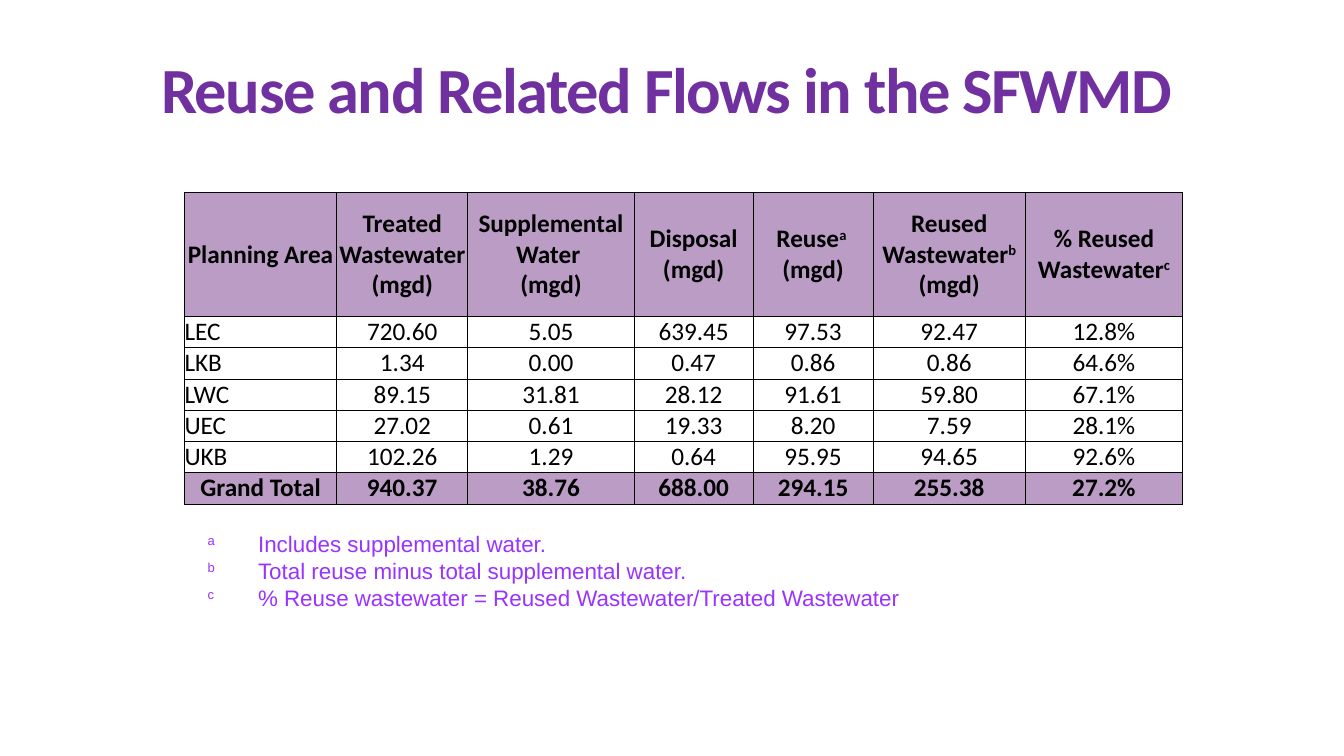
from lxml import etree
from pptx import Presentation
from pptx import util as u
from pptx.dml import color
from pptx.enum import text
from pptx.oxml import ns

LILAC = "BA9CC5"
COLUMN_WIDTHS = [1.51, 1.3, 1.65, 1.18, 1.19, 1.51, 1.56]
HEADER_HEIGHT, ROW_HEIGHT = 1.23, 0.31
ROWS = [
    ["Planning Area", "Treated Wastewater (mgd)", "Supplemental Water \n(mgd)",
     "Disposal (mgd)", "Reuse^a ^\n(mgd)", "Reused Wastewater^b^ (mgd)",
     "% Reused Wastewater^c"],
    ["LEC", "720.60", "5.05", "639.45", "97.53", "92.47", "12.8%"],
    ["LKB", "1.34", "0.00", "0.47", "0.86", "0.86", "64.6%"],
    ["LWC", "89.15", "31.81", "28.12", "91.61", "59.80", "67.1%"],
    ["UEC", "27.02", "0.61", "19.33", "8.20", "7.59", "28.1%"],
    ["UKB", "102.26", "1.29", "0.64", "95.95", "94.65", "92.6%"],
    ["Grand Total", "940.37", "38.76", "688.00", "294.15", "255.38", "27.2%"],
]
FOOTNOTES = [
    "^a^\tIncludes supplemental water.",
    "^b^\tTotal reuse minus total supplemental water.",
    "^c^\t% Reuse wastewater = Reused Wastewater/Treated Wastewater",
]


def rgb(value):
    return color.RGBColor.from_string(value)


def add_runs(paragraph, marked, name, size, hue, bold=False):
    for index, piece in enumerate(marked.split("^")):
        for number, line in enumerate(piece.split("\n")):
            if number:
                paragraph.add_line_break()
            if not line:
                continue
            run = paragraph.add_run()
            run.text = line
            run.font.name = name
            run.font.size = u.Pt(size)
            run.font.bold = bold
            run.font.color.rgb = rgb(hue)
            if index % 2:
                run.font._element.set("baseline", "30000")


presentation = Presentation()
presentation.slide_width = u.Inches(13.33)
presentation.slide_height = u.Inches(7.5)
slide = presentation.slides.add_slide(presentation.slide_layouts[1])

title = slide.shapes.title
title.left, title.top = u.Inches(0.78), u.Inches(0.3)
title.width, title.height = u.Inches(11.66), u.Inches(1.14)
title.text_frame.vertical_anchor = text.MSO_ANCHOR.MIDDLE
heading = title.text_frame.paragraphs[0]
heading.alignment = text.PP_ALIGN.CENTER
add_runs(heading, "Reuse and Related Flows in the SFWMD", "Calibri", 46, "7030A0", True)
heading.runs[0].font._element.set("spc", "-100")

footnotes = slide.placeholders[1]
footnotes.left, footnotes.top = u.Inches(1.46), u.Inches(5.21)
footnotes.width, footnotes.height = u.Inches(11.66), u.Inches(1.2)
footnotes.text_frame.auto_size = text.MSO_AUTO_SIZE.NONE
for index, note in enumerate(FOOTNOTES):
    frame = footnotes.text_frame
    paragraph = frame.add_paragraph() if index else frame.paragraphs[0]
    paragraph.alignment = text.PP_ALIGN.JUSTIFY
    paragraph.space_before = u.Pt(0)
    properties = paragraph._p.get_or_add_pPr()
    properties.set("marL", str(u.Inches(0.5)))
    properties.set("indent", "0")
    etree.SubElement(properties, ns.qn("a:buNone"))
    add_runs(paragraph, note, "Arial", 16, "9933FF")

table = slide.shapes.add_table(
    len(ROWS), len(COLUMN_WIDTHS), u.Inches(1.83), u.Inches(1.91),
    u.Inches(sum(COLUMN_WIDTHS)),
    u.Inches(HEADER_HEIGHT + ROW_HEIGHT * (len(ROWS) - 1))).table
table.first_row = table.horz_banding = False
for column, width in zip(table.columns, COLUMN_WIDTHS):
    column.width = u.Inches(width)

for row_index, values in enumerate(ROWS):
    table.rows[row_index].height = u.Inches(ROW_HEIGHT if row_index else HEADER_HEIGHT)
    emphasized = row_index in (0, len(ROWS) - 1)
    for column_index, value in enumerate(values):
        cell = table.cell(row_index, column_index)
        cell.margin_left = cell.margin_right = cell.margin_top = cell.margin_bottom = 0
        cell.vertical_anchor = text.MSO_ANCHOR.MIDDLE
        paragraph = cell.text_frame.paragraphs[0]
        centered = emphasized or column_index > 0
        paragraph.alignment = text.PP_ALIGN.CENTER if centered else text.PP_ALIGN.LEFT
        add_runs(paragraph, value, "Calibri", 18, "000000", emphasized)
        properties = cell._tc.get_or_add_tcPr()
        for side in ("lnL", "lnR", "lnT", "lnB"):
            border = etree.SubElement(properties, ns.qn("a:" + side), w=str(u.Pt(0.5)))
            fill = etree.SubElement(border, ns.qn("a:solidFill"))
            etree.SubElement(fill, ns.qn("a:srgbClr"), val="000000")
        if emphasized:
            cell.fill.solid()
            cell.fill.fore_color.rgb = rgb(LILAC)
        else:
            cell.fill.background()

presentation.save("out.pptx")
